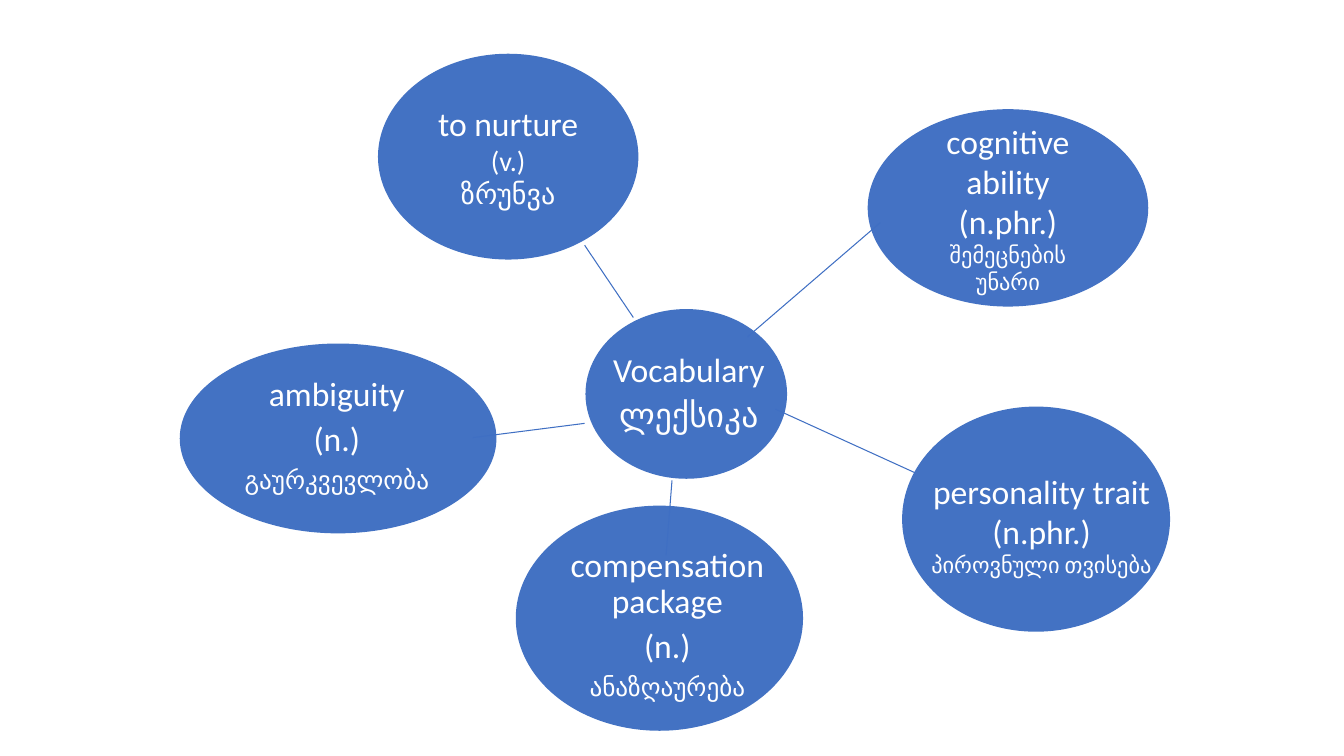
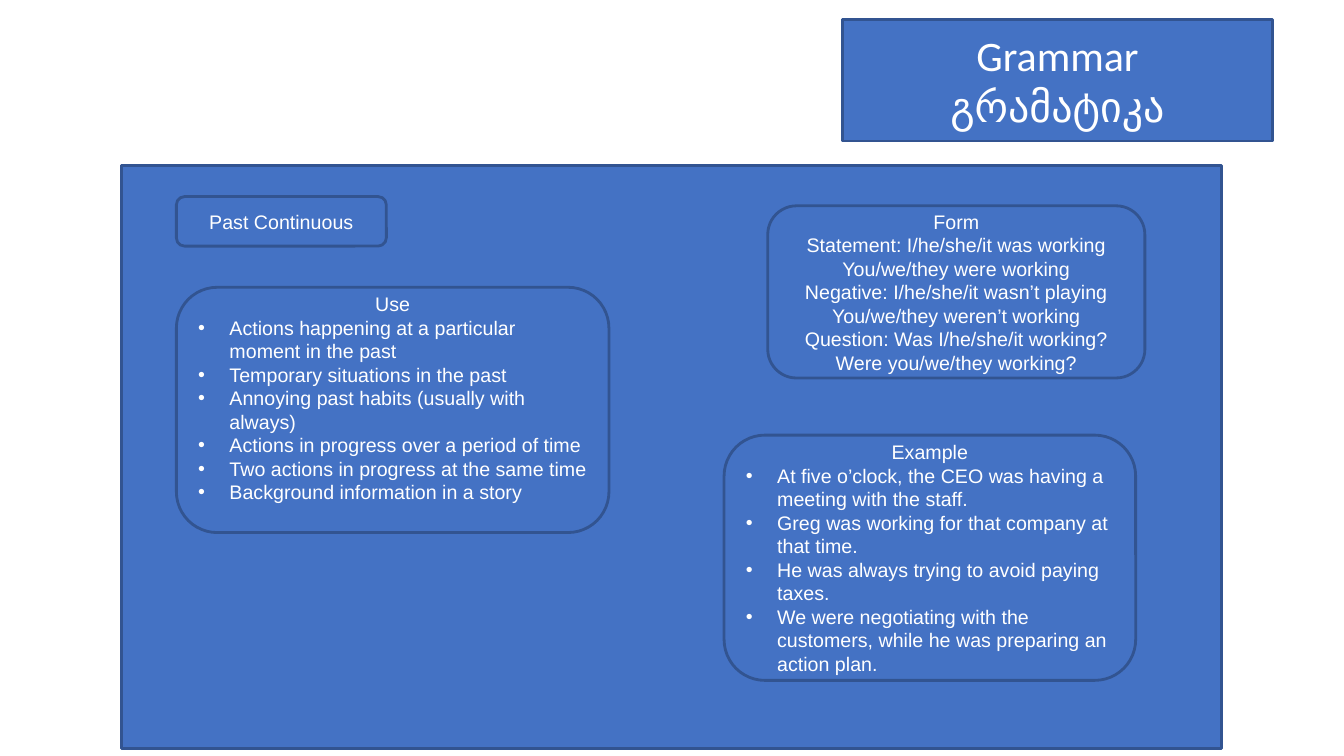
from lxml import etree
from pptx import Presentation
from pptx.dml.color import RGBColor
from pptx.enum.shapes import MSO_CONNECTOR, MSO_SHAPE
from pptx.enum.text import MSO_ANCHOR, PP_ALIGN
from pptx.oxml.ns import qn
from pptx.util import Inches, Pt

ELLIPSE = MSO_SHAPE.OVAL
RECTANGLE = MSO_SHAPE.RECTANGLE
ROUNDED = MSO_SHAPE.ROUNDED_RECTANGLE
STRAIGHT = MSO_CONNECTOR.STRAIGHT
MIDDLE = MSO_ANCHOR.MIDDLE
CENTER, LEFT = PP_ALIGN.CENTER, PP_ALIGN.LEFT

COLORS = {"bubble": "4372C3", "panel": "4472C4", "border": "325491",
          "link": "3F6FC3", "text": "FFFFFF"}
COLUMNS, ROWS = 160, 90
WORD_FONT, GRAMMAR_FONT = "Calibri", "Arial"
TITLE_SIZE, GRAMMAR_SIZE = 30, 14
BULLET_INDENT = Inches(0.31)


def color(name):
    return RGBColor.from_string(COLORS[name])


class Deck:
    def __init__(self):
        self.prs = Presentation()
        self.prs.slide_width = Inches(13.33)
        self.prs.slide_height = Inches(7.5)
        self.shapes = None

    def new_slide(self):
        self.shapes = self.prs.slides.add_slide(self.prs.slide_layouts[6]).shapes

    def place(self, column, row):
        return (round(self.prs.slide_width * column / COLUMNS),
                round(self.prs.slide_height * row / ROWS))

    def area(self, column, row, columns, rows):
        return self.place(column, row) + self.place(columns, rows)

    def figure(self, outline, area, fill, border=None):
        figure = self.shapes.add_shape(outline, *self.area(*area))
        figure.shadow.inherit = False
        figure.fill.solid()
        figure.fill.fore_color.rgb = color(fill)
        if border:
            figure.line.color.rgb = color(border)
            figure.line.width = Pt(2)
        else:
            figure.line.fill.background()
        return figure

    def frame(self, holder, inset=None):
        frame = holder.text_frame
        frame.word_wrap = True
        frame.vertical_anchor = MIDDLE
        if inset is not None:
            frame.margin_left = frame.margin_right = Inches(inset)
            frame.margin_top = frame.margin_bottom = Inches(inset)
        return frame

    def fill_text(self, frame, lines, font, spacing=None, gap=0):
        for number, (words, size, bulleted) in enumerate(lines):
            paragraph = frame.add_paragraph() if number else frame.paragraphs[0]
            paragraph.text = words
            paragraph.alignment = LEFT if bulleted else CENTER
            if bulleted:
                self.bullet(paragraph)
            if spacing:
                paragraph.line_spacing = spacing
            if number and gap:
                paragraph.space_before = Pt(gap)
            paragraph.font.name = font
            paragraph.font.size = Pt(size)
            paragraph.font.color.rgb = color("text")

    def bullet(self, paragraph):
        properties = paragraph._p.get_or_add_pPr()
        properties.set("marL", str(BULLET_INDENT))
        properties.set("indent", str(-BULLET_INDENT))
        tint = etree.SubElement(properties, qn("a:buClr"))
        etree.SubElement(tint, qn("a:srgbClr"), val=COLORS["text"])
        etree.SubElement(properties, qn("a:buFont"), typeface=GRAMMAR_FONT)
        etree.SubElement(properties, qn("a:buChar"), char="•")

    def bubble(self, area, lines, caption=None, inset=None, spacing=None,
               gap=0, fill="bubble"):
        holder = self.figure(ELLIPSE, area, fill)
        if caption:
            holder = self.shapes.add_textbox(*self.area(*caption))
            inset = 0.01
        self.fill_text(self.frame(holder, inset),
                       [(words, size, False) for words, size in lines],
                       WORD_FONT, spacing, gap)

    def link(self, start, end):
        link = self.shapes.add_connector(
            STRAIGHT, *self.place(*start), *self.place(*end))
        link.line.color.rgb = color("link")
        link.line.width = Pt(0.75)
        etree.SubElement(link._element.spPr, qn("a:effectLst"))

    def panel(self, area):
        self.figure(RECTANGLE, area, "panel", "border")

    def title(self, area, lines):
        banner = self.figure(RECTANGLE, area, "panel", "border")
        self.fill_text(self.frame(banner),
                       [(words, TITLE_SIZE, False) for words in lines], WORD_FONT)

    def card(self, area, heading, lines=(), bulleted=False, lift=0):
        card = self.figure(ROUNDED, area, "panel", "border")
        frame = self.frame(card)
        if lift:
            frame.margin_top = 0
            frame.margin_bottom = Inches(2 * lift)
        rows = [(heading, GRAMMAR_SIZE, False)]
        rows += [(words, GRAMMAR_SIZE, bulleted) for words in lines]
        self.fill_text(frame, rows, GRAMMAR_FONT)


def vocabulary(deck):
    deck.new_slide()
    deck.bubble((69.7, 36.8, 24, 20.2), [("Vocabulary", 24), ("ლექსიკა", 24)],
                caption=(72.4, 39.8, 19.2, 14.3), spacing=0.9, gap=6)
    deck.bubble((45, 6.4, 31, 24.5),
                [("to nurture", 24), ("(v.)", 20), ("ზრუნვა", 20)], inset=0.1)
    deck.bubble((21.4, 40.9, 37.7, 22.6),
                [("ambiguity", 24), ("(n.)", 24), ("გაურკვევლობა", 18)],
                caption=(24.2, 46.1, 31.8, 11.6), spacing=0.9, gap=6.3)
    deck.bubble((61.4, 60.2, 34.2, 26.8),
                [("compensation package", 24), ("(n.)", 24), ("ანაზღაურება", 18)],
                caption=(66, 69, 26.9, 10.9), spacing=0.9, gap=6.3)
    deck.bubble((103.3, 13, 33.4, 23.5),
                [("cognitive ability", 24), ("(n.phr.)", 24),
                 ("შემეცნების უნარი", 16)], fill="panel")
    for start, end in [((69.6, 29.2), (75.4, 37.8)),
                       ((104.8, 26.5), (89, 40.1)),
                       ((79.3, 66.1), (80, 57.2)),
                       ((56.3, 52.1), (69.6, 50.4)),
                       ((111.6, 57.5), (92.3, 48.7))]:
        deck.link(start, end)
    deck.bubble((107.4, 48.4, 31.9, 26.8),
                [("personality trait", 24), ("(n.phr.)", 24),
                 ("პიროვნული თვისება", 16)],
                caption=(110.2, 55.2, 27.6, 14.4))


def grammar(deck):
    deck.new_slide()
    deck.panel((14.5, 19.7, 130.9, 69.4))
    deck.title((100.3, 2.3, 51.2, 14.5), ["Grammar", "გრამატიკა"])
    deck.card((21, 23.4, 25, 5.9), "Past Continuous")
    deck.card((21, 34.2, 51.5, 29.2), "Use", [
        "Actions happening at a particular moment in the past",
        "Temporary situations in the past",
        "Annoying past habits (usually with always)",
        "Actions in progress over a period of time",
        "Two actions in progress at the same time",
        "Background information in a story",
    ], bulleted=True, lift=0.12)
    deck.card((91.4, 24.5, 44.9, 20.5), "Form", [
        "Statement: I/he/she/it was working",
        "You/we/they were working",
        "Negative: I/he/she/it wasn’t playing",
        "You/we/they weren’t working",
        "Question: Was I/he/she/it working?",
        "Were you/we/they working?",
    ])
    deck.card((86.2, 51.8, 49, 29.2), "Example", [
        "At five o’clock, the CEO was having a meeting with the staff.",
        "Greg was working for that company at that time.",
        "He was always trying to avoid paying taxes.",
        "We were negotiating with the customers, while he was preparing "
        "an action plan.",
    ], bulleted=True)


def main():
    deck = Deck()
    vocabulary(deck)
    grammar(deck)
    deck.prs.save("out.pptx")


if __name__ == "__main__":
    main()
